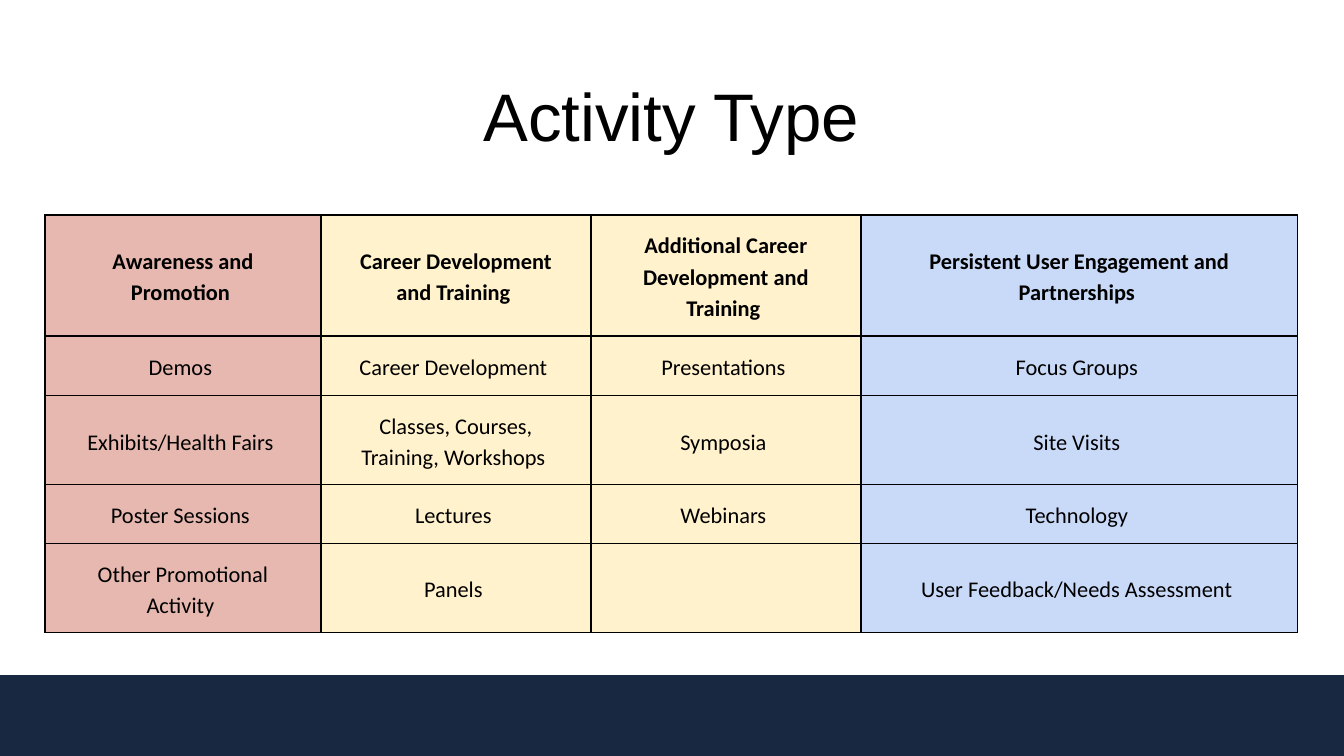
from lxml.etree import SubElement
from pptx import Presentation
from pptx.dml.color import RGBColor
from pptx.enum.shapes import MSO_SHAPE
from pptx.enum.text import MSO_ANCHOR, PP_ALIGN
from pptx.oxml.ns import qn
from pptx.util import Pt

EMU_PER_PX = 914400 / 134.4
SLIDE_W, SLIDE_H = 1344, 756

BLACK = RGBColor(0x00, 0x00, 0x00)
NAVY = RGBColor(0x19, 0x28, 0x41)
ROSE = RGBColor(0xE6, 0xB8, 0xAF)
CREAM = RGBColor(0xFF, 0xF2, 0xCC)
SKY = RGBColor(0xC9, 0xDA, 0xF8)

# Each column: width, colour, heading, activities
CATEGORIES = [
    (276, ROSE, "Awareness and Promotion",
     ["Demos", "Exhibits/Health Fairs", "Poster Sessions", "Other Promotional Activity"]),
    (270, CREAM, "Career Development and Training",
     ["Career Development", "Classes, Courses, Training, Workshops", "Lectures", "Panels"]),
    (270, CREAM, "Additional Career Development and Training",
     ["Presentations", "Symposia", "Webinars"]),
    (437, SKY, "Persistent User Engagement and Partnerships",
     ["Focus Groups", "Site Visits", "Technology", "User Feedback/Needs Assessment"]),
]
ROW_HEIGHTS = [121, 60, 89, 59, 89]
CELL_INDENT = 9


def px(length):
    return round(length * EMU_PER_PX)


def box_emu(box):
    return [px(length) for length in box]


def style_paragraph(paragraph, font_name, size, bold=False):
    paragraph.alignment = PP_ALIGN.CENTER
    for run in paragraph.runs:
        run.font.name = font_name
        run.font.size = Pt(size)
        run.font.bold = bold
        run.font.color.rgb = BLACK


def set_insets(target):
    target.margin_left = target.margin_right = px(13)
    target.margin_top = target.margin_bottom = px(13)


def add_footer_band(slide, box):
    band = slide.shapes.add_shape(MSO_SHAPE.RECTANGLE, *box_emu(box))
    band.shadow.inherit = False
    band.fill.solid()
    band.fill.fore_color.rgb = NAVY
    band.line.color.rgb = NAVY
    band.line.width = Pt(1.5)


def add_title(slide, box):
    frame = slide.shapes.add_textbox(*box_emu(box)).text_frame
    frame.word_wrap = True
    frame.vertical_anchor = MSO_ANCHOR.MIDDLE
    set_insets(frame)
    frame.text = "Activity Type"
    style_paragraph(frame.paragraphs[0], "Arial", 36)


def add_borders(cell, top, bottom):
    properties = cell._tc.get_or_add_tcPr()
    for side, width in (("L", 0.75), ("R", 0.75), ("T", top), ("B", bottom)):
        line = SubElement(properties, qn(f"a:ln{side}"), w=str(Pt(width)))
        fill = SubElement(line, qn("a:solidFill"))
        SubElement(fill, qn("a:srgbClr"), val=str(BLACK))


def fill_cell(cell, label, colour, row):
    set_insets(cell)
    cell.vertical_anchor = MSO_ANCHOR.MIDDLE
    # A heavier rule separates the headings from the activities
    add_borders(cell, top=1.5 if row == 1 else 0.75, bottom=1.5 if row == 0 else 0.75)
    cell.fill.solid()
    cell.fill.fore_color.rgb = colour
    if label:
        paragraph = cell.text_frame.paragraphs[0]
        paragraph.text = f"{label} "
        paragraph.line_spacing = 1.15
        for margin in ("marL", "marR"):
            paragraph._p.get_or_add_pPr().set(margin, str(px(CELL_INDENT)))
        style_paragraph(paragraph, "Calibri", 12, bold=row == 0)


def add_activity_table(slide, left, top):
    width = sum(category[0] for category in CATEGORIES)
    box = (left, top, width, sum(ROW_HEIGHTS))
    activities = slide.shapes.add_table(
        len(ROW_HEIGHTS), len(CATEGORIES), *box_emu(box)).table
    activities.first_row = activities.horz_banding = False
    for row, height in enumerate(ROW_HEIGHTS):
        activities.rows[row].height = px(height)
    for column, (width, colour, heading, names) in enumerate(CATEGORIES):
        activities.columns[column].width = px(width)
        labels = [heading, *names]
        for row in range(len(ROW_HEIGHTS)):
            label = labels[row] if row < len(labels) else ""
            fill_cell(activities.cell(row, column), label, colour, row)


def main():
    deck = Presentation()
    deck.slide_width, deck.slide_height = px(SLIDE_W), px(SLIDE_H)
    slide = deck.slides.add_slide(deck.slide_layouts[6])
    add_footer_band(slide, (0, 676, SLIDE_W, 80))
    add_activity_table(slide, 45, 215)
    add_title(slide, (45, 53, 1253, 124))
    deck.save("out.pptx")


if __name__ == "__main__":
    main()
